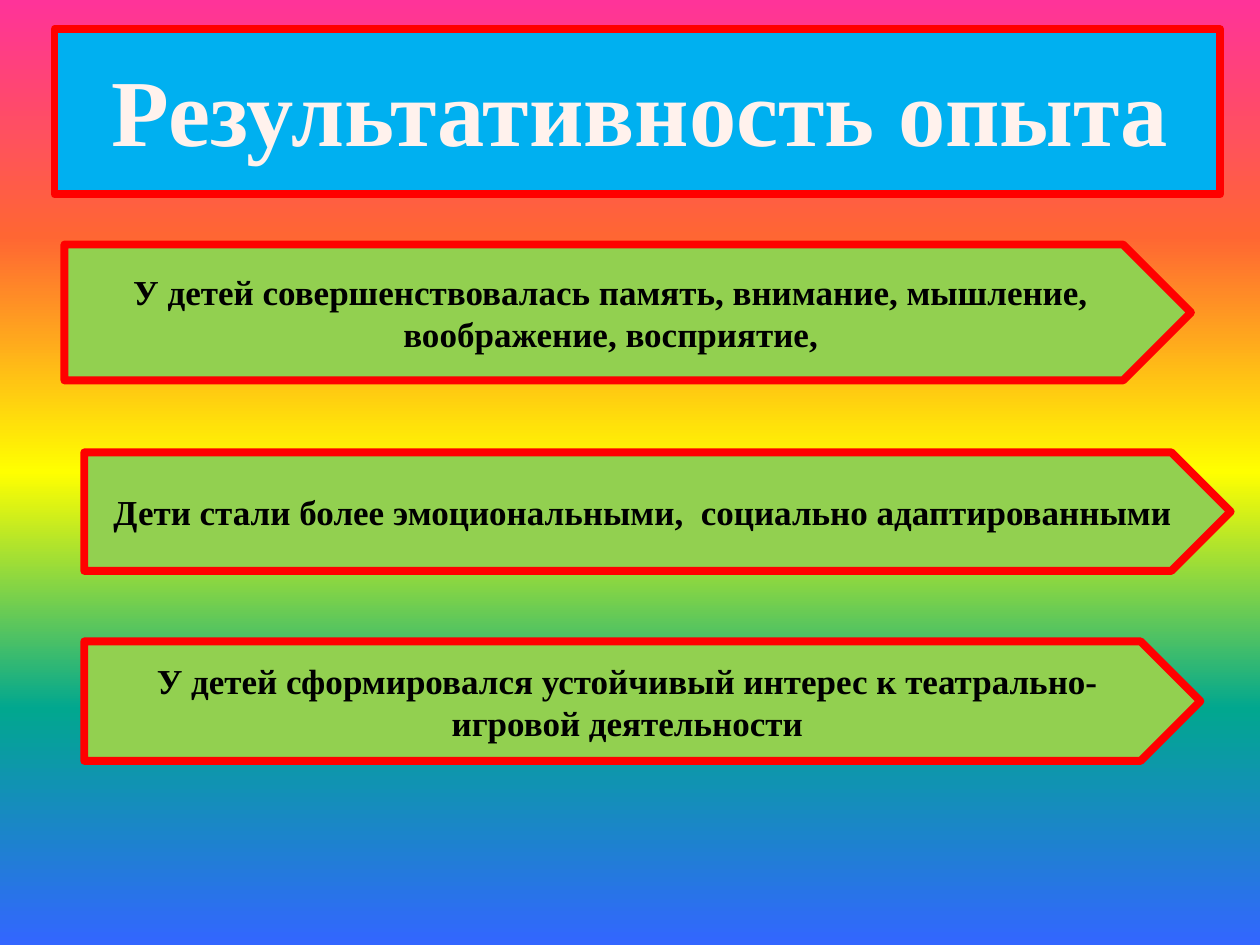
from copy import deepcopy

from pptx import Presentation
from pptx.dml.color import RGBColor
from pptx.enum.shapes import MSO_SHAPE
from pptx.enum.text import MSO_ANCHOR, MSO_AUTO_SIZE, PP_ALIGN
from pptx.util import Cm, Pt

SKY = [(0, "FF3399"), (25, "FF6633"), (50, "FFFF00"), (75, "01A78F"), (100, "3366FF")]
GOALS = [
    ((1.3, 4.93, 22.71, 2.74),
     "У детей совершенствовалась память, внимание, мышление, воображение, восприятие,"),
    ((1.7, 9.12, 23.11, 2.39),
     "Дети стали более эмоциональными,  социально адаптированными"),
    ((1.7, 12.93, 22.5, 2.41),
     "У детей сформировался устойчивый интерес к театрально-игровой деятельности"),
]


def tint(color, code):
    color.rgb = RGBColor.from_string(code)


def write(frame, text, size=20, color="000000", bold=True, font="Times New Roman"):
    part = frame.paragraphs[0]
    part.alignment = PP_ALIGN.CENTER
    run = part.add_run()
    run.text = text
    run.font.name, run.font.size, run.font.bold = font, Pt(size), bold
    tint(run.font.color, color)


class Deck:
    """Hold the style and the current slide."""

    edge, width = "FF0000", 4.5

    def __init__(self, show):
        self.slide = show.slides.add_slide(show.slide_layouts[6])

    def sky(self, stops):
        fill = self.slide.background.fill
        fill.gradient()
        fill.gradient_angle = 270
        first = fill.gradient_stops[0]
        group = fill._fill._gradFill.gsLst
        base = deepcopy(group[0])
        while len(group) < len(stops):
            group.append(deepcopy(base))
        for stop, (place, code) in zip(fill.gradient_stops, stops):
            stop.position = place / 100
            tint(stop.color, code)

    def block(self, kind, box, color):
        shape = self.slide.shapes.add_shape(kind, *map(Cm, box))
        shape.shadow.inherit = False
        shape.fill.solid()
        tint(shape.fill.fore_color, color)
        tint(shape.line.color, self.edge)
        shape.line.width = Pt(self.width)
        return shape

    def arrow(self, box, text):
        frame = self.block(MSO_SHAPE.PENTAGON, box, "92D050").text_frame
        frame.word_wrap = True
        frame.vertical_anchor = MSO_ANCHOR.MIDDLE
        write(frame, text)

    def title(self, box, text):
        frame = self.slide.shapes.add_textbox(*map(Cm, box)).text_frame
        frame.word_wrap = False
        frame.auto_size = MSO_AUTO_SIZE.SHAPE_TO_FIT_TEXT
        write(frame, text, size=54, color="FFF2ED")


def main():
    show = Presentation()
    show.slide_width, show.slide_height = Cm(25.4), Cm(19.05)
    deck = Deck(show)
    deck.sky(SKY)
    deck.block(MSO_SHAPE.RECTANGLE, (1.1, 0.59, 23.5, 3.33), "00B0F0")
    for box, text in GOALS:
        deck.arrow(box, text)
    deck.title((1.9, 0.92, 22.02, 2.56), "Результативность опыта")
    show.save("out.pptx")


if __name__ == "__main__":
    main()
